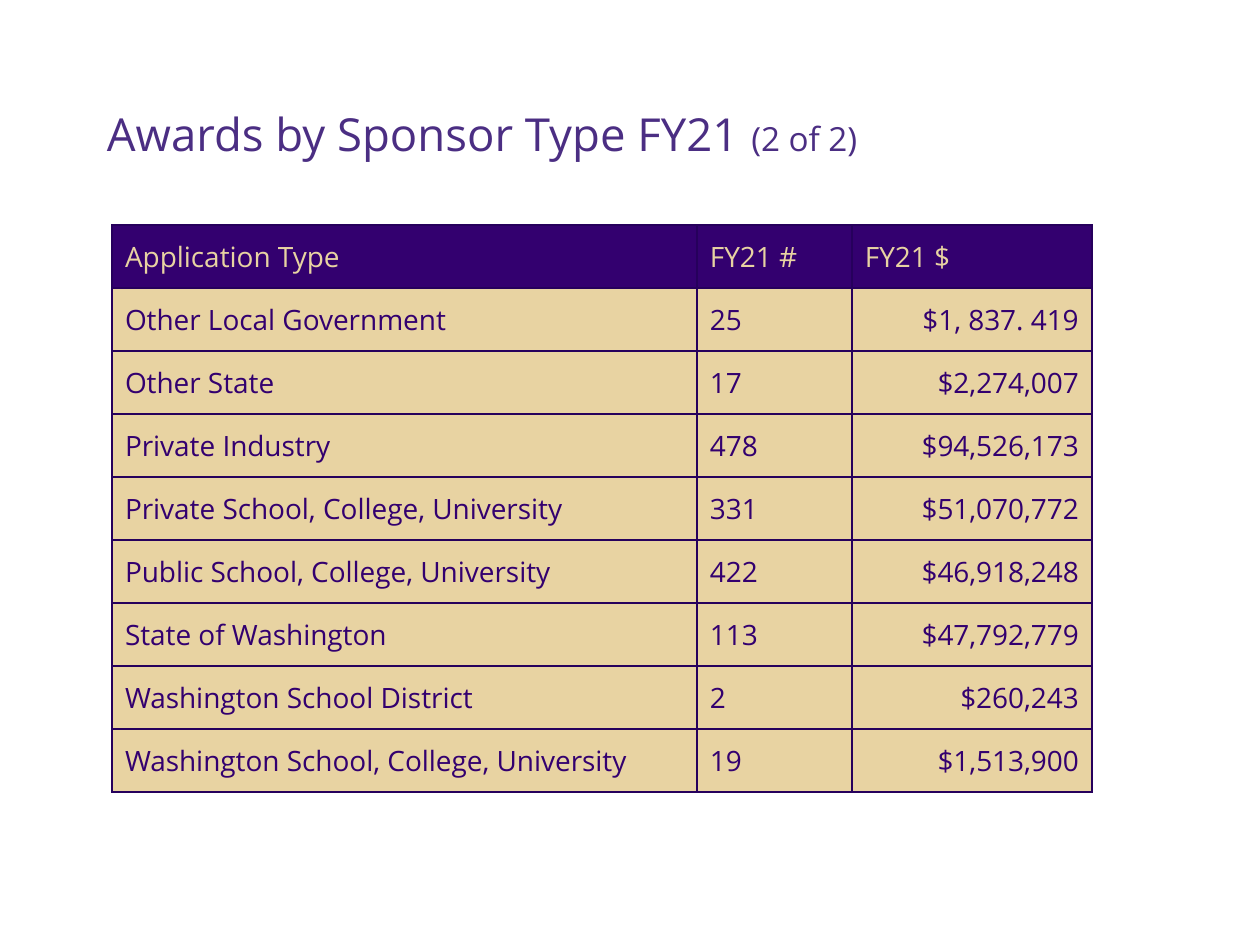
from typing import NamedTuple

from lxml import etree
from pptx import Presentation
from pptx.dml.color import RGBColor
from pptx.enum.text import MSO_ANCHOR, PP_ALIGN
from pptx.oxml.ns import qn
from pptx.util import Emu, Pt

LEFT, RIGHT = PP_ALIGN.LEFT, PP_ALIGN.RIGHT
BOTTOM = MSO_ANCHOR.BOTTOM
SCALE = 914400 / 126
FONT = "Open Sans"
VIOLET, PURPLE, GOLD, EDGE = "4B2E83", "33006F", "E8D3A2", "26005C"
PAD = 13
ROW_H = 63


class Award(NamedTuple):
    sponsor: str
    count: str
    amount: str


class Column(NamedTuple):
    width: int
    align: PP_ALIGN


HEAD = Award("Application Type", "FY21 #", "FY21 $")
AWARDS = [
    Award("Other Local Government", "25", "$1, 837. 419"),
    Award("Other State", "17", "$2,274,007"),
    Award("Private Industry", "478", "$94,526,173"),
    Award("Private School, College, University", "331", "$51,070,772"),
    Award("Public School, College, University", "422", "$46,918,248"),
    Award("State of Washington", "113", "$47,792,779"),
    Award("Washington School District", "2", "$260,243"),
    Award("Washington School, College, University", "19", "$1,513,900"),
]
COLUMNS = [Column(585, LEFT), Column(155, LEFT), Column(240, RIGHT)]


def px(n: int) -> Emu:
    return Emu(round(n * SCALE))


def rgb(color: str) -> RGBColor:
    return RGBColor.from_string(color)


def set_pad(box) -> None:
    box.margin_left = box.margin_right = px(PAD)
    box.margin_top = box.margin_bottom = px(PAD)


def set_font(font, size: int, color: str) -> None:
    font.name = FONT
    font.size = Pt(size)
    font.color.rgb = rgb(color)


def add_edges(cell) -> None:
    props = cell._tc.get_or_add_tcPr()
    for side in ("a:lnL", "a:lnR", "a:lnT", "a:lnB"):
        line = etree.SubElement(props, qn(side), w=str(Pt(0.75)))
        fill = etree.SubElement(line, qn("a:solidFill"))
        etree.SubElement(fill, qn("a:srgbClr"), val=EDGE)


def fill_cell(cell, text: str, ink: str, back: str, align: PP_ALIGN) -> None:
    add_edges(cell)
    cell.fill.solid()
    cell.fill.fore_color.rgb = rgb(back)
    set_pad(cell)
    cell.text = text
    para = cell.text_frame.paragraphs[0]
    para.alignment = align
    set_font(para.font, 16, ink)


def add_title(slide) -> None:
    frame = slide.shapes.add_textbox(px(94), px(58), px(808), px(116)).text_frame
    frame.word_wrap = True
    frame.vertical_anchor = BOTTOM
    set_pad(frame)
    para = frame.paragraphs[0]
    para.line_spacing = 0.9
    for text, size in (("Awards by Sponsor Type FY21 ", 26), ("(2 of 2)", 19)):
        run = para.add_run()
        run.text = text
        set_font(run.font, size, VIOLET)


def add_awards(slide) -> None:
    rows = [HEAD, *AWARDS]
    width = sum(col.width for col in COLUMNS)
    table = slide.shapes.add_table(
        len(rows), len(COLUMNS), px(112), px(225), px(width), px(ROW_H * len(rows))
    ).table
    table.first_row = table.horz_banding = False
    for i, col in enumerate(COLUMNS):
        table.columns[i].width = px(col.width)
    for r, award in enumerate(rows):
        table.rows[r].height = px(ROW_H)
        is_head = r == 0
        ink, back = (GOLD, PURPLE) if is_head else (PURPLE, GOLD)
        for c, (text, col) in enumerate(zip(award, COLUMNS)):
            fill_cell(table.cell(r, c), text, ink, back, LEFT if is_head else col.align)


def main() -> None:
    deck = Presentation()
    deck.slide_width, deck.slide_height = px(1260), px(945)
    slide = deck.slides.add_slide(deck.slide_layouts[6])
    # Heading
    add_title(slide)
    # Awards table
    add_awards(slide)
    deck.save("out.pptx")


if __name__ == "__main__":
    main()
